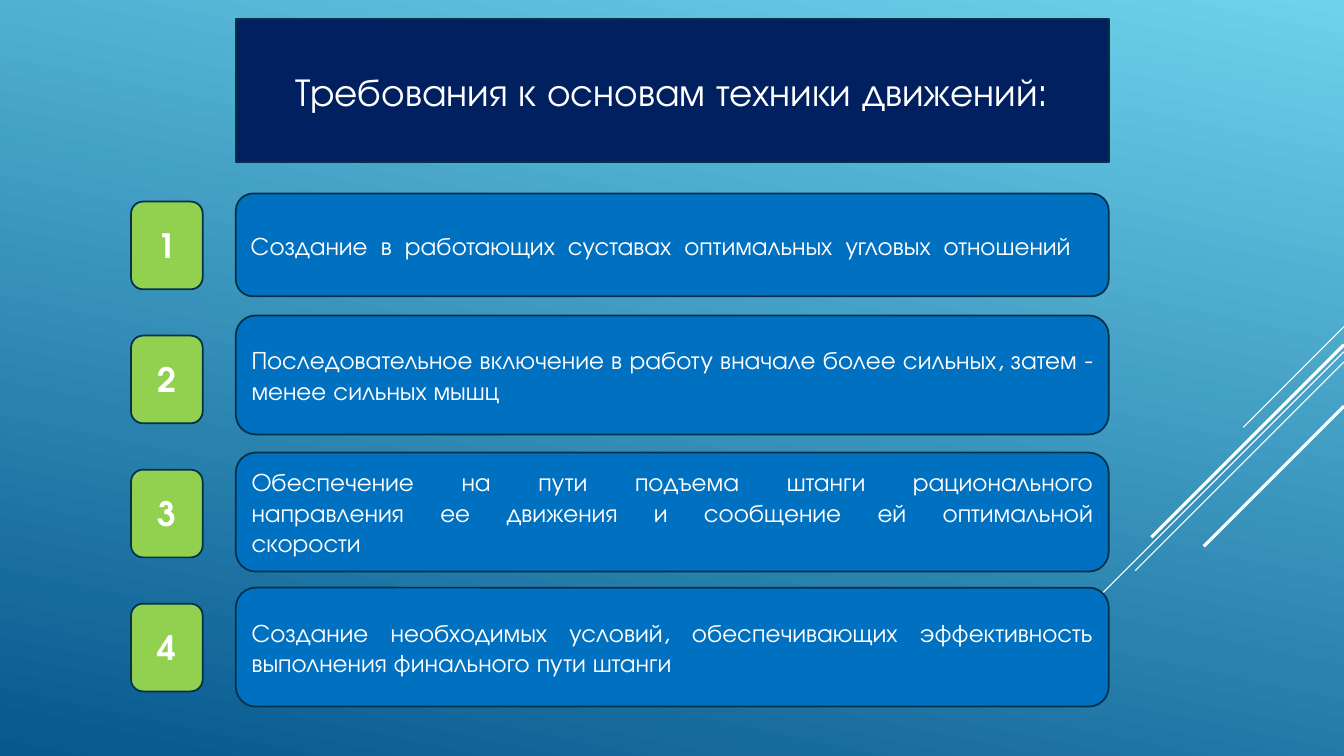
"""Build a slide listing four numbered requirements for movement technique."""
from dataclasses import dataclass

from lxml.etree import SubElement as Sub
from pptx import Presentation
from pptx.dml.color import RGBColor as Rgb
from pptx.enum.shapes import MSO_CONNECTOR as Link, MSO_SHAPE as Form
from pptx.enum.text import MSO_ANCHOR as Anchor, PP_ALIGN as Align
from pptx.oxml.ns import qn
from pptx.util import Inches, Pt

WIDE, HIGH = Inches(13.333), Inches(7.5)
FONT = "TeX Gyre Adventor"
INK = {
    "sky": "6ED2EB", "deep": "06588E", "white": "FFFFFF", "navy": "002060",
    "blue": "0070C0", "green": "92D050", "edge": "043148",
}


@dataclass
class Ray:
    top: float
    run: float
    weight: float


@dataclass
class Row:
    top: float
    high: float
    text: str
    gap: float = 0


@dataclass
class Style:
    fill: str
    size: int
    align: Align
    bold: bool = False


LEFT, SPAN = 17.55, 64.95
HEAD = Style("navy", 28, Align.CENTER)
ITEM = Style("blue", 18, Align.JUSTIFY)
BADGE = Style("green", 24, Align.CENTER, True)
RAYS = [
    Ray(43.2, 7.5, 0.75), Ray(46.53, 24.45, 0.75), Ray(47.87, 15.53, 0.75),
    Ray(45.6, 14.33, 2.25), Ray(53.73, 10.43, 2.25),
]
ROWS = [
    Row(25.6, 13.6, "Создание в работающих суставах оптимальных угловых отношений", 4.3),
    Row(41.73, 15.73, "Последовательное включение в работу вначале более сильных, "
        "затем - менее сильных мышц"),
    Row(59.87, 15.73, "Обеспечение на пути подъема штанги рационального направления "
        "ее движения и сообщение ей оптимальной скорости", 10),
    Row(77.73, 15.73, "Создание необходимых условий, обеспечивающих эффективность "
        "выполнения финального пути штанги"),
]


def tint(name: str) -> Rgb:
    return Rgb.from_string(INK[name])


def across(share: float) -> int:
    return round(WIDE * share / 100)


def down(share: float) -> int:
    return round(HIGH * share / 100)


def place(shape, left: float, top: float, wide: float, high: float) -> None:
    shape.left, shape.top = across(left), down(top)
    shape.width, shape.height = across(wide), down(high)


def write(para, text: str, style: Style, gap: float = 0) -> None:
    parts = [text]
    if gap:
        parts = [part for word in text.split(" ") for part in (" ", word)][1:]
    for part in parts:
        run = para.add_run()
        run.text = part
        font = run.font
        font.name, font.size, font.bold = FONT, Pt(style.size), style.bold
        font.color.rgb = tint("white")
        if part == " ":
            font._element.set("spc", str(round(gap * 100)))


def dress(shape, text: str, style: Style, gap: float = 0) -> None:
    shape.fill.solid()
    shape.fill.fore_color.rgb = tint(style.fill)
    shape.line.color.rgb = tint("edge")
    shape.line.width = Pt(1.25)
    frame = shape.text_frame
    frame.word_wrap = True
    frame.vertical_anchor = Anchor.MIDDLE
    para = frame.paragraphs[0]
    para.alignment = style.align
    write(para, text, style, gap)


def add_box(slide, left: float, top: float, wide: float, high: float,
            text: str, style: Style, gap: float = 0) -> None:
    box = slide.shapes.add_shape(Form.ROUNDED_RECTANGLE, across(left), down(top),
                                 across(wide), down(high))
    box.shadow.inherit = False
    dress(box, text, style, gap)


def add_ray(slide, ray: Ray) -> None:
    top, run = down(ray.top), across(ray.run)
    line = slide.shapes.add_connector(Link.STRAIGHT, WIDE, top, WIDE - run, top + run)
    line.line.color.rgb = tint("white")
    line.line.width = Pt(ray.weight)
    Sub(line._element.spPr, qn("a:effectLst"))


def add_title(slide, text: str) -> None:
    title = slide.shapes.title
    place(title, LEFT, 2.53, SPAN, 18.93)
    shape = Sub(title._element.spPr, qn("a:prstGeom"), prst="roundRect")
    Sub(shape, qn("a:avLst"))
    dress(title, text, HEAD)


def paint(slide) -> None:
    fill = slide.background.fill
    fill.gradient()
    fill.gradient_angle = 258
    for stop, name in zip(fill.gradient_stops, ("sky", "deep")):
        stop.color.rgb = tint(name)


def main() -> None:
    deck = Presentation()
    deck.slide_width, deck.slide_height = WIDE, HIGH
    slide = deck.slides.add_slide(deck.slide_layouts[5])
    paint(slide)
    for ray in RAYS:
        add_ray(slide, ray)
    add_title(slide, "Требования к основам техники движений:")
    for row in ROWS:
        add_box(slide, LEFT, row.top, SPAN, row.high, row.text, ITEM, row.gap)
    for step in range(len(ROWS)):
        add_box(slide, 9.75, 26.67 + 17.73 * step, 5.33, 11.6, str(step + 1), BADGE)
    deck.save("out.pptx")


if __name__ == "__main__":
    main()
